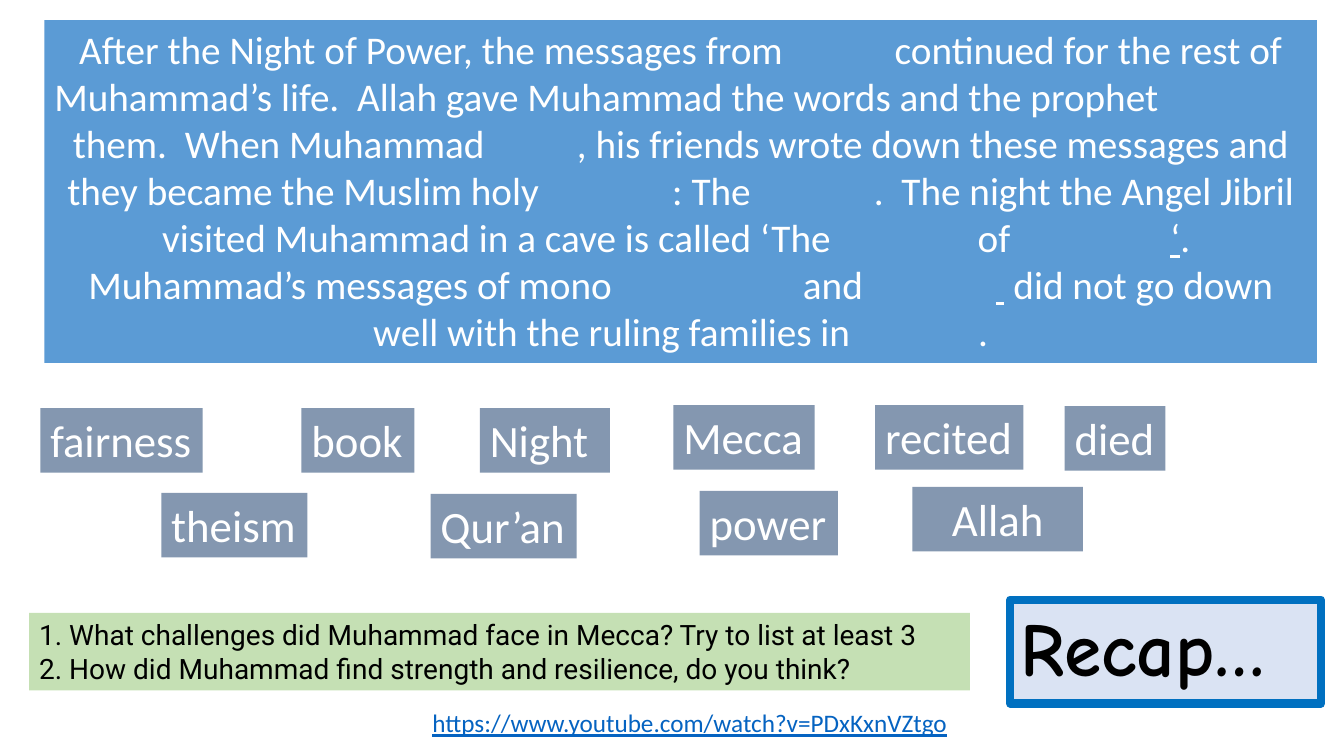
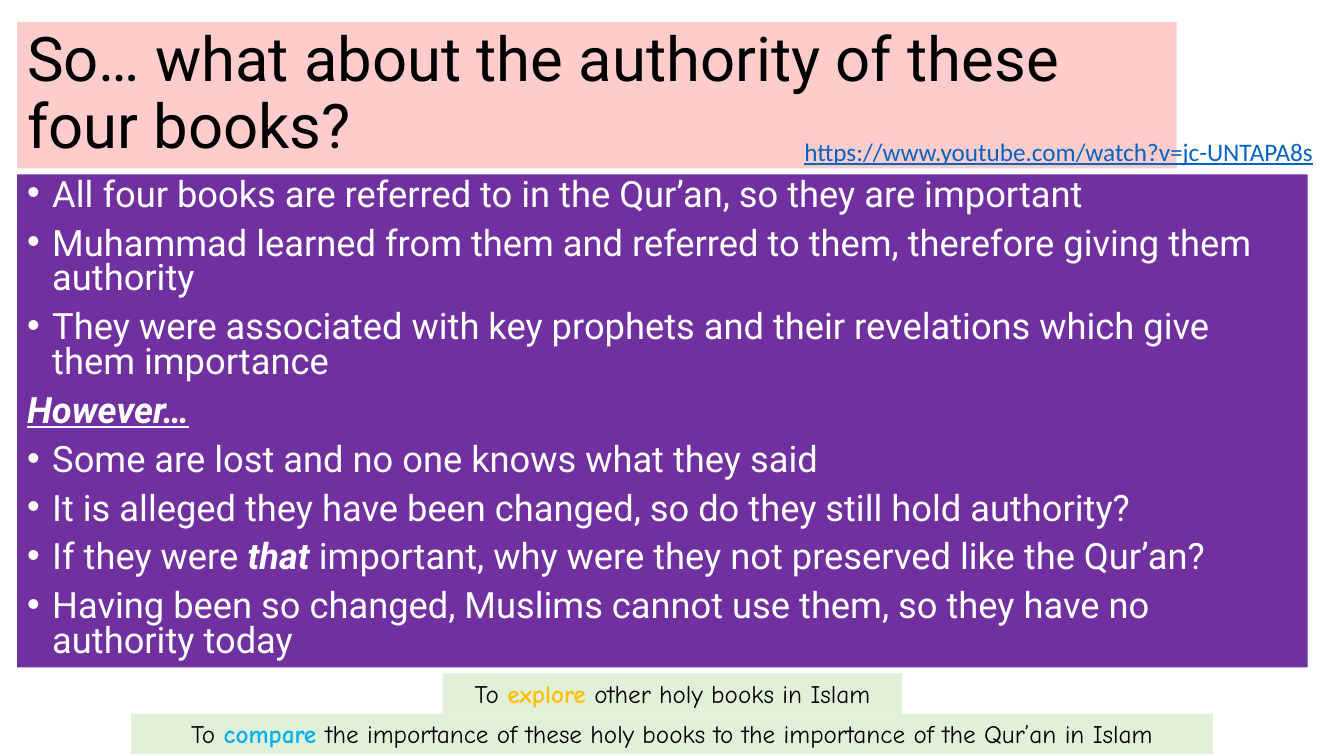
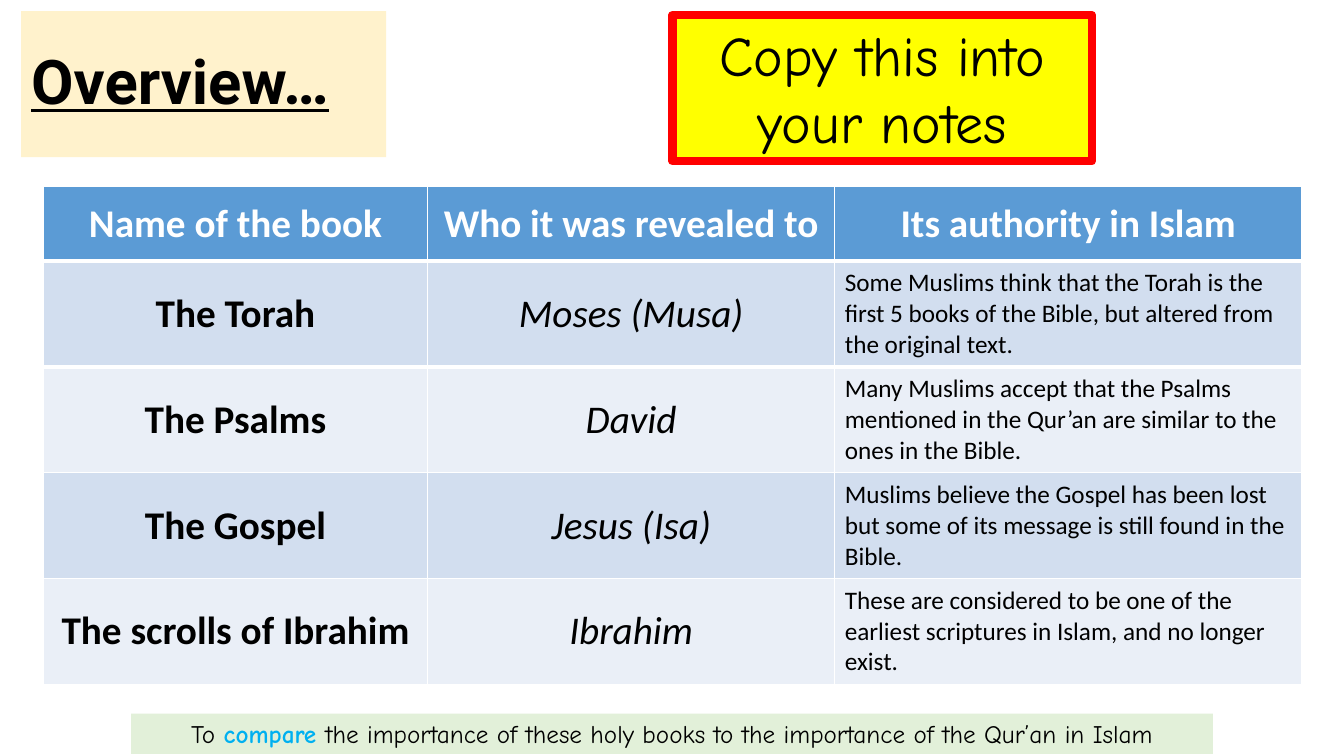
from dataclasses import dataclass, replace

from lxml import etree
from pptx import Presentation
from pptx.dml.color import RGBColor
from pptx.enum.shapes import MSO_SHAPE
from pptx.enum.text import MSO_ANCHOR, MSO_AUTO_SIZE, PP_ALIGN
from pptx.oxml.ns import qn
from pptx.util import Emu, Pt

RECTANGLE = MSO_SHAPE.RECTANGLE
TOP, MIDDLE = MSO_ANCHOR.TOP, MSO_ANCHOR.MIDDLE
LEFT, CENTER = PP_ALIGN.LEFT, PP_ALIGN.CENTER
NO_AUTOFIT = MSO_AUTO_SIZE.NONE
EMU_PER_PX = 9144
TITLE_ONLY, BLANK = 5, 6


@dataclass(frozen=True)
class Theme:
    plain: str = "Calibri"
    clean: str = "Roboto"
    hand: str = "Comic Neue"
    black: str = "000000"
    white: str = "FFFFFF"
    blue: str = "5B9BD5"
    slate: str = "8497B0"
    link: str = "0563C1"
    question: str = "C5E0B4"
    recap: str = "DAE3F3"
    recap_edge: str = "0070C0"
    pink: str = "FFCCCC"
    purple: str = "7030A0"
    cream: str = "FFF2CC"
    yellow: str = "FFFF00"
    red: str = "FF0000"
    objective: str = "E2F0D9"
    explore: str = "FFC000"
    compare: str = "00B0F0"
    bands: tuple = ("D2DEEF", "EAEFF7")
    small: float = 18
    question_size: float = 20
    body: float = 25.9
    large: float = 28
    word: float = 32
    notice: float = 40
    title: float = 44
    recap_size: float = 54
    edge: float = 6
    header_rule: float = 3


THEME = Theme()


@dataclass(frozen=True)
class Style:
    font: str
    size: float
    color: str = THEME.black
    bold: bool = False
    italic: bool = False
    underline: bool = False
    align: PP_ALIGN = LEFT
    spacing: float = 1.0


CLOZE = Style(THEME.plain, THEME.large, THEME.white, align=CENTER)
WORD = Style(THEME.plain, THEME.word, THEME.white)
LINK = Style(THEME.plain, THEME.small, THEME.link, underline=True)
QUESTION = Style(THEME.clean, THEME.question_size)
RECAP = Style(THEME.hand, THEME.recap_size, bold=True, spacing=0.9)
TITLE = Style(THEME.clean, THEME.title, spacing=0.9)
BODY = Style(THEME.clean, THEME.body, THEME.white, spacing=0.8)
OBJECTIVE = Style(THEME.hand, THEME.small, align=CENTER)
NOTICE = Style(THEME.hand, THEME.notice, align=CENTER)
HEADER = replace(CLOZE, bold=True)
BOOK = replace(HEADER, color=THEME.black)
PROPHET = replace(BOOK, bold=False, italic=True)
AUTHORITY = Style(THEME.plain, THEME.small)

PASSAGE = (
    "After the Night of Power, the messages from ", "\t",
    " continued for the rest of Muhammad’s life.  Allah gave Muhammad the words and the prophet ",
    "\t\t", " them.  When Muhammad ", "\t",
    ", his friends wrote down these messages and they became the Muslim holy ", "\t\t",
    ": The ", "\t\t",
    ".  The night the Angel Jibril visited Muhammad in a cave is called ‘The ", "\t\t",
    " of ", "\t\t‘", ".  Muhammad’s messages of mono", "\t\t", " and ", "\t\t ",
    " did not go down well with the ruling families in ", "\t\t", ".",
)
WORDS = (
    ("fairness", 40, 405, 161), ("book", 299, 405, 112), ("Night", 476, 405, 129),
    ("Mecca", 668, 402, 140), ("recited", 868, 402, 147), ("died", 1056, 403, 100),
    ("theism", 160, 489, 145), ("Qur’an", 427, 490, 145), ("power", 694, 487, 137),
)
QUESTIONS = (
    "1. What challenges did Muhammad face in Mecca? Try to list at least 3",
    "2. How did Muhammad find strength and resilience, do you think?",
)
REASONS = (
    "All four books are referred to in the Qur’an, so they are important",
    "Muhammad learned from them and referred to them, therefore giving them authority",
    "They were associated with key prophets and their revelations which give them importance",
)
HOWEVER = "However…"
DOUBTS = (
    "Some are lost and no one knows what they said",
    "It is alleged they have been changed, so do they still hold authority?",
    (("If they were ", {}), ("that", {"bold": True, "italic": True}),
     (" important, why were they not preserved like the Qur’an?", {})),
    "Having been so changed, Muslims cannot use them, so they have no authority today",
)
BOOKS = (
    ("Name of the book", "Who it was revealed to", "Its authority in Islam"),
    ("The Torah", "Moses (Musa)",
     "Some Muslims think that the Torah is the first 5 books of the Bible, but altered from the original text."),
    ("The Psalms", "David",
     "Many Muslims accept that the Psalms mentioned in the Qur’an are similar to the ones in the Bible."),
    ("The Gospel", "Jesus (Isa)",
     "Muslims believe the Gospel has been lost but some of its message is still found in the Bible."),
    ("The scrolls of Ibrahim", "Ibrahim",
     "These are considered to be one of the earliest scriptures in Islam, and no longer exist."),
)


def px(length):
    return Emu(length * EMU_PER_PX)


def rgb(color):
    return RGBColor.from_string(color)


def paint(target, color):
    target.fill.solid()
    target.fill.fore_color.rgb = rgb(color)


def set_font(font, style):
    font.name = style.font
    font.size = Pt(style.size)
    font.color.rgb = rgb(style.color)
    font.bold = style.bold
    font.italic = style.italic
    font.underline = style.underline


def write_paragraph(paragraph, content, style):
    paragraph.alignment = style.align
    paragraph.line_spacing = style.spacing
    paragraph._p.get_or_add_pPr().set("defTabSz", str(px(100)))
    set_font(paragraph.font, style)
    if isinstance(content, str):
        paragraph.add_run().text = content
        return
    for text, changes in content:
        run = paragraph.add_run()
        run.text = text
        set_font(run.font, replace(style, **changes))


def write(frame, contents, style, anchor=TOP):
    frame.word_wrap = True
    frame.auto_size = NO_AUTOFIT
    frame.vertical_anchor = anchor
    for index, content in enumerate(contents):
        paragraph = frame.add_paragraph() if index else frame.paragraphs[0]
        write_paragraph(paragraph, content, style)


def add_panel(slide, box, fill, contents, style, anchor=TOP, edge=None):
    panel = slide.shapes.add_shape(RECTANGLE, *map(px, box))
    panel.shadow.inherit = False
    paint(panel, fill)
    if edge:
        panel.line.color.rgb = rgb(edge)
        panel.line.width = Pt(THEME.edge)
    else:
        panel.line.fill.background()
    write(panel.text_frame, contents, style, anchor)
    return panel.text_frame


def add_title(slide, box, fill, text, style=TITLE):
    title = slide.shapes.title
    title.left, title.top, title.width, title.height = map(px, box)
    paint(title, fill)
    write(title.text_frame, [text], style, MIDDLE)


def add_link(slide, box, address):
    frame = slide.shapes.add_textbox(*map(px, box)).text_frame
    write(frame, [address], LINK)
    frame.margin_right = 0


def add_objective(slide, box, verb, color, rest):
    sentence = (("To ", {}), (verb, {"color": color, "bold": True}), (rest, {}))
    add_panel(slide, box, THEME.objective, [sentence], OBJECTIVE)


def add_compare_objective(slide):
    add_objective(slide, (130, 708, 1073, 40), "compare ", THEME.compare,
                  "the importance of these holy books to the importance of the Qur’an in Islam")


def add_bullet(paragraph):
    properties = paragraph._p.get_or_add_pPr()
    indent = px(25)
    properties.set("marL", str(indent))
    properties.set("indent", str(-indent))
    etree.SubElement(properties, qn("a:buFont")).set("typeface", "Arial")
    etree.SubElement(properties, qn("a:buChar")).set("char", "•")


def add_arguments(slide, box):
    frame = add_panel(slide, box, THEME.purple, [], BODY)
    for index, content in enumerate((*REASONS, HOWEVER, *DOUBTS)):
        paragraph = frame.add_paragraph() if index else frame.paragraphs[0]
        style = BODY
        if index:
            paragraph.space_before = Pt(10)
        if content == HOWEVER:
            style = replace(BODY, bold=True, italic=True, underline=True)
        else:
            paragraph.line_spacing = BODY.spacing
            add_bullet(paragraph)
        write_paragraph(paragraph, content, style)


def add_word_bank(slide, height):
    for word, left, top, width in WORDS:
        frame = add_panel(slide, (left, top, width, height), THEME.slate, [word], WORD)
        frame.margin_right = 0
    add_panel(slide, (905, 483, 169, height), THEME.slate, ["Allah"],
              replace(WORD, align=CENTER))


def add_header_rule(cell, side):
    properties = cell._tc.get_or_add_tcPr()
    rule = etree.Element(qn(side), w=str(Pt(THEME.header_rule)))
    fill = etree.SubElement(rule, qn("a:solidFill"))
    etree.SubElement(fill, qn("a:srgbClr")).set("val", THEME.white)
    properties.insert(0, rule)


def add_book_table(slide, box):
    table = slide.shapes.add_table(len(BOOKS), len(BOOKS[0]), *map(px, box)).table
    for column, width in zip(table.columns, (381, 404, 463)):
        column.width = px(width)
    for row_index, texts in enumerate(BOOKS):
        table.rows[row_index].height = px(105 if row_index else 74)
        styles = (BOOK, PROPHET, AUTHORITY) if row_index else (HEADER,) * 3
        fill = THEME.bands[(row_index - 1) % 2] if row_index else THEME.blue
        for column_index, (text, style) in enumerate(zip(texts, styles)):
            cell = table.cell(row_index, column_index)
            paint(cell, fill)
            cell.vertical_anchor = MIDDLE
            if row_index < 2:
                add_header_rule(cell, "a:lnT" if row_index else "a:lnB")
            write_paragraph(cell.text_frame.paragraphs[0], text, style)


def build_recap(slide):
    passage = [(text, {"underline": index % 2 == 1}) for index, text in enumerate(PASSAGE)]
    add_panel(slide, (44, 20, 1262, 340), THEME.blue, [passage], CLOZE)
    add_word_bank(slide, 64)
    add_link(slide, (419, 697, 543, 40), "https://www.youtube.com/watch?v=PDxKxnVZtgo")
    add_panel(slide, (29, 608, 933, 77), THEME.question, QUESTIONS, QUESTION)
    add_panel(slide, (1002, 595, 308, 103), THEME.recap, ["Recap…"], RECAP,
              MIDDLE, THEME.recap_edge)


def build_authority(slide):
    add_title(slide, (17, 22, 1150, 145), THEME.pink,
              "So… what about the authority of these four books?")
    add_arguments(slide, (17, 173, 1280, 489))
    add_link(slide, (788, 130, 536, 40), "https://www.youtube.com/watch?v=jc-UNTAPA8s")
    add_objective(slide, (439, 668, 456, 40), "explore", THEME.explore,
                  " other holy books in Islam")
    add_compare_objective(slide)


def build_overview(slide):
    add_title(slide, (21, 11, 362, 145), THEME.cream, "Overview…",
              replace(TITLE, bold=True, underline=True))
    add_book_table(slide, (43, 185, 1248, 494))
    add_panel(slide, (667, 15, 416, 145), THEME.yellow, ["Copy this into your notes"],
              NOTICE, edge=THEME.red)
    add_compare_objective(slide)


def main():
    deck = Presentation()
    deck.slide_width, deck.slide_height = px(1333), px(750)
    for layout, build in ((BLANK, build_recap), (TITLE_ONLY, build_authority),
                          (TITLE_ONLY, build_overview)):
        build(deck.slides.add_slide(deck.slide_layouts[layout]))
    deck.save("out.pptx")


if __name__ == "__main__":
    main()
